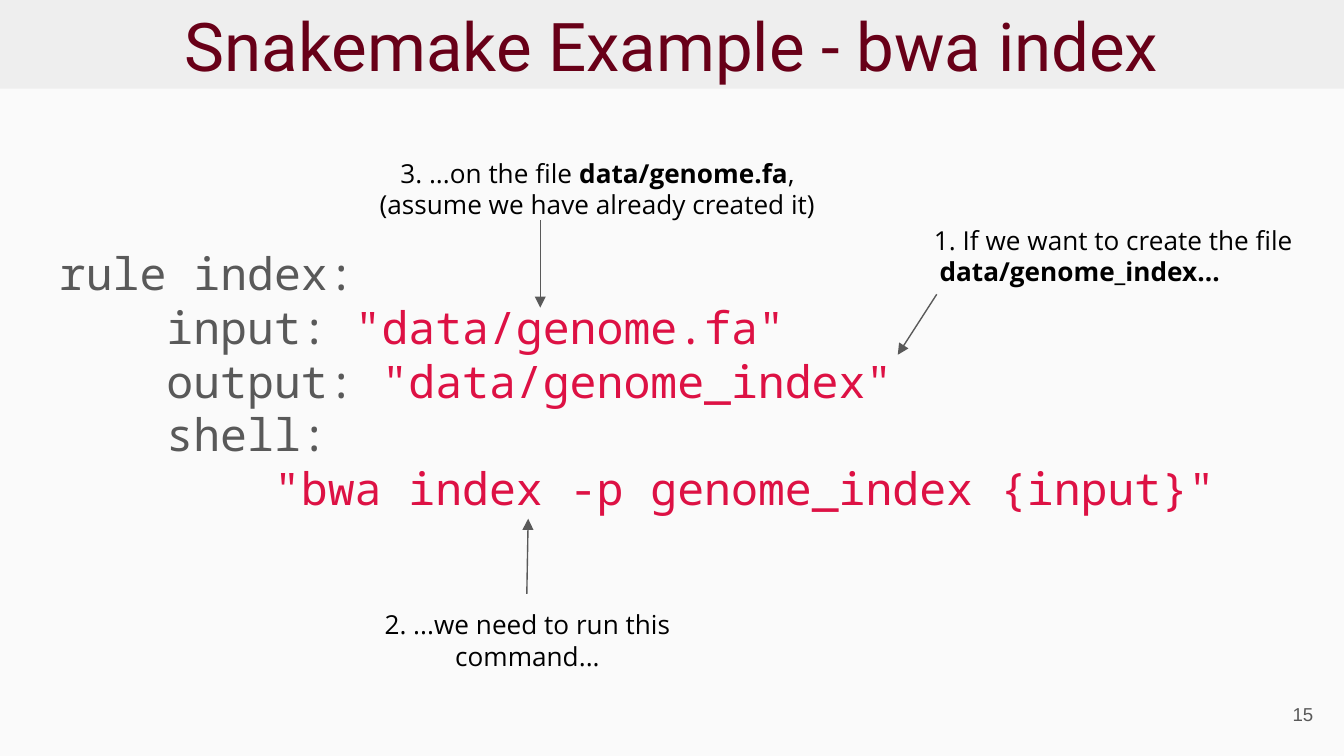
"""Build the Snakemake bwa index example slide."""
from lxml.etree import SubElement
from pptx import Presentation
from pptx.dml.color import RGBColor
from pptx.enum.shapes import MSO_CONNECTOR
from pptx.enum.text import MSO_ANCHOR, PP_ALIGN
from pptx.oxml.ns import qn
from pptx.util import Inches, Pt

GREY, RED, BLACK = "595959", "DD1144", "000000"


def paint(target, color):
    if hasattr(target, "solid"):
        target.solid()
        target = target.fore_color
    target.rgb = RGBColor.from_string(color)


def setup(sp, box, anchor=MSO_ANCHOR.TOP):
    sp.left, sp.top, sp.width, sp.height = [Inches(v) for v in box]
    tf = sp.text_frame
    tf.word_wrap = True
    tf.vertical_anchor = anchor
    tf.margin_left = tf.margin_right = tf.margin_top = tf.margin_bottom = Inches(0.1)
    return tf


prs = Presentation()
prs.slide_width, prs.slide_height = Inches(10), Inches(10 * 9 / 16)
s = prs.slides.add_slide(prs.slide_layouts[5])
paint(s.background.fill, "FAFAFA")

title = s.shapes.title
paint(title.fill, "EEEEEE")
tf = setup(title, (0, 0, 10, 0.66), MSO_ANCHOR.MIDDLE)
p = tf.paragraphs[0]
p.text = "Snakemake Example - bwa index"
p.alignment = PP_ALIGN.CENTER
p.font.name, p.font.size = "Roboto", Pt(36)
paint(p.font.color, "680018")

code = [
    (0, "rule index:", ""),
    (1, "input: ", '"data/genome.fa"'),
    (1, "output: ", '"data/genome_index"'),
    (1, "shell:", ""),
    (2, "", '"bwa index -p genome_index {input}"'),
]
tf = setup(s.shapes.add_textbox(0, 0, 0, 0), (0.34, 1.33, 9.32, 2.73))
tf.margin_top = Inches(0.5)
for i, (level, keyword, value) in enumerate(code):
    p = tf.add_paragraph() if i else tf.paragraphs[0]
    p.line_spacing = Pt(28.8)
    p.font.name, p.font.size = "Noto Sans Mono", Pt(24)
    p._p.get_or_add_pPr().set("marL", str(Inches(0.8 * level)))
    for text, color in ((keyword, GREY), (value, RED)):
        if text:
            r = p.add_run()
            r.text = text
            paint(r.font.color, color)

tf = setup(s.shapes.add_textbox(0, 0, 0, 0), (9.27, 5.1, 0.6, 0.43), MSO_ANCHOR.MIDDLE)
p = tf.paragraphs[0]
p.text = "15"
p.alignment = PP_ALIGN.RIGHT
p.font.name, p.font.size = "Arial", Pt(10)
paint(p.font.color, GREY)

notes = [
    ((6.31, 1.57, 3.45, 0.74), (6.97, 2.19, 6.68, 2.64),
     [(0.5, [("1. If we want to create the file", False)]),
      (0, [("data/genome_index...", True)])]),
    ((2.2, 4.43, 3.45, 0.56), (3.92, 4.42, 3.93, 3.86),
     [(0, [("2. ...we need to run this command...", False)])]),
    ((2.72, 1.07, 3.45, 0.56), (4.02, 1.64, 4.02, 2.29),
     [(0, [("3. ...on the file ", False), ("data/genome.fa", True),
           (", (assume we have already created it)", False)])]),
]
for box, ends, paragraphs in notes:
    tf = setup(s.shapes.add_textbox(0, 0, 0, 0), box)
    for i, (indent, runs) in enumerate(paragraphs):
        p = tf.add_paragraph() if i else tf.paragraphs[0]
        p.alignment = PP_ALIGN.CENTER
        p.font.name, p.font.size = "Open Sans", Pt(14)
        paint(p.font.color, BLACK)
        p._p.get_or_add_pPr().set("marL", str(Inches(indent)))
        for text, bold in runs:
            r = p.add_run()
            r.text, r.font.bold = text, bold
    arrow = s.shapes.add_connector(MSO_CONNECTOR.STRAIGHT, *[Inches(v) for v in ends])
    paint(arrow.line.fill, GREY)
    arrow.line.width = Pt(0.75)
    SubElement(arrow.line._get_or_add_ln(), qn("a:tailEnd"), type="triangle")
    SubElement(arrow._element.spPr, qn("a:effectLst"))

prs.save("out.pptx")
